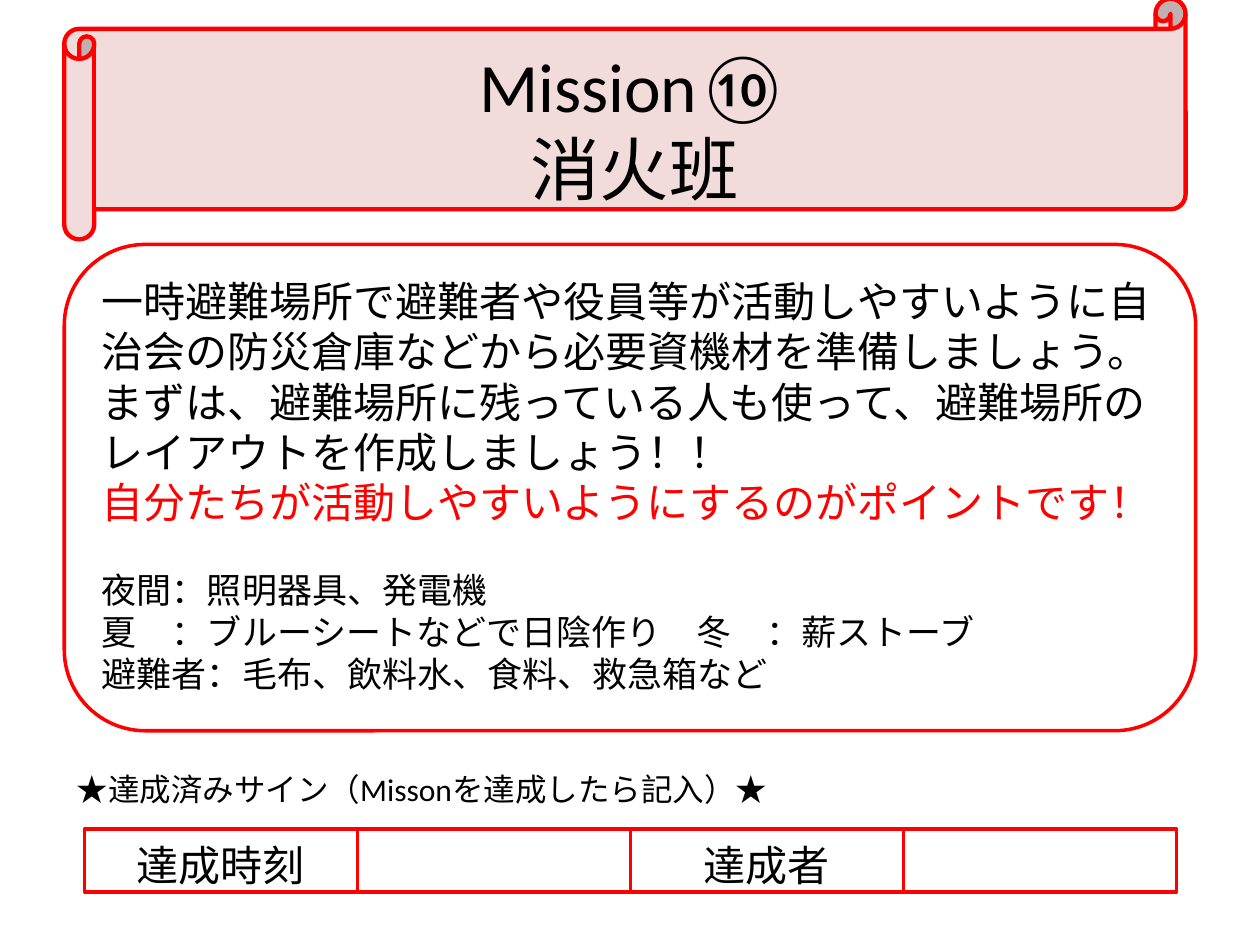
from lxml import etree
from pptx import Presentation
from pptx import util as u
from pptx.dml.color import RGBColor
from pptx.enum import shapes, text
from pptx.oxml.ns import qn

COLORS = {"ink": "000000", "red": "FF0000", "blush": "F2DCDB"}
LATIN, JAPANESE = "Calibri", "Noto Sans CJK JP"
COLUMNS, ROWS = 100, 75
LINE_HEIGHT = 1.195
CENTER = text.PP_ALIGN.CENTER

MISSION = [
    ("一時避難場所で避難者や役員等が活動しやすいように自治会の防災倉庫などから"
     "必要資機材を準備しましょう。", 24, "ink", 0),
    ("まずは、避難場所に残っている人も使って、避難場所のレイアウトを作成しましょう！！", 24, "ink", 0),
    ("自分たちが活動しやすいようにするのがポイントです！", 24, "red", 0),
    ("夜間：照明器具、発電機", 20, "ink", 24),
    ("夏　：ブルーシートなどで日陰作り　冬　：薪ストーブ", 20, "ink", 0),
    ("避難者：毛布、飲料水、食料、救急箱など", 20, "ink", 0),
]
SIGN_CELLS = ["達成時刻", "", "達成者", ""]


class MissionSlide:
    def __init__(self, presentation):
        self.width = presentation.slide_width
        self.height = presentation.slide_height
        self.slide = presentation.slides.add_slide(presentation.slide_layouts[6])

    def place(self, column, row, columns, rows):
        """Turn grid units into left, top, width and height."""
        across, down = self.width / COLUMNS, self.height / ROWS
        return (u.Emu(round(column * across)), u.Emu(round(row * down)),
                u.Emu(round(columns * across)), u.Emu(round(rows * down)))

    def outline(self, kind, area, line_width, fill=None, parent=None):
        parent = parent or self.slide
        shape = parent.shapes.add_shape(kind, *self.place(*area))
        shape.shadow.inherit = False
        if fill:
            shape.fill.solid()
            shape.fill.fore_color.rgb = RGBColor.from_string(COLORS[fill])
        else:
            shape.fill.background()
        shape.line.color.rgb = RGBColor.from_string(COLORS["red"])
        shape.line.width = u.Pt(line_width)
        return shape

    def fill_text(self, shape, lines, font=LATIN, alignment=None, inset=0.1,
                  anchor=text.MSO_ANCHOR.MIDDLE):
        """Fill a shape with (wording, size, colour, space before) lines."""
        frame = shape.text_frame
        frame_format = {"word_wrap": True, "vertical_anchor": anchor,
                        "auto_size": text.MSO_AUTO_SIZE.NONE,
                        "margin_top": u.Inches(inset), "margin_bottom": u.Inches(0.03)}
        for name, value in frame_format.items():
            setattr(frame, name, value)
        for index, (wording, size, color, gap) in enumerate(lines):
            paragraph = frame.add_paragraph() if index else frame.paragraphs[0]
            paragraph_format = {"alignment": alignment, "space_before": u.Pt(gap),
                                "line_spacing": u.Pt(round(size * LINE_HEIGHT, 1))}
            for name, value in paragraph_format.items():
                setattr(paragraph, name, value)
            for part_index, part in enumerate(wording.split("\n")):
                if part_index:
                    paragraph.add_line_break()
                run = paragraph.add_run()
                run.text = part
                for name, value in {"name": font, "size": u.Pt(size)}.items():
                    setattr(run.font, name, value)
                run.font.color.rgb = RGBColor.from_string(COLORS[color])
                east_asian = etree.SubElement(run._r.get_or_add_rPr(), qn("a:ea"))
                east_asian.set("typeface", JAPANESE)

    def text_box(self, area, lines, **style):
        shape = self.slide.shapes.add_textbox(*self.place(*area))
        self.fill_text(shape, lines, **style)

    def cell_row(self, column, row, columns, rows, labels):
        group = self.slide.shapes.add_group_shape()
        for index, label in enumerate(labels):
            area = (column + index * columns, row, columns, rows)
            shape = self.outline(shapes.MSO_SHAPE.RECTANGLE, area, 2, parent=group)
            if label:
                self.fill_text(shape, [(label, 24, "ink", 0)], alignment=CENTER)


def main():
    presentation = Presentation()
    presentation.slide_width = u.Inches(10)
    presentation.slide_height = u.Inches(7.5)
    page = MissionSlide(presentation)

    page.text_box((7.1, 21, 87.8, 34.7), MISSION, font=JAPANESE, inset=0.09,
                  anchor=text.MSO_ANCHOR.TOP)
    page.outline(shapes.MSO_SHAPE.HORIZONTAL_SCROLL, (5.1, -0.1, 89, 19.1), 2.5, "blush")
    page.text_box((9.8, 3.2, 81.1, 12.5), [("Mission⑩\n消火班", 39.6, "ink", 0)],
                  alignment=CENTER, inset=0.15)
    page.outline(shapes.MSO_SHAPE.ROUNDED_RECTANGLE, (5.1, 19.4, 89.8, 38.6), 2)
    page.text_box((5.1, 60.3, 66.9, 4),
                  [("★達成済みサイン（Missonを達成したら記入）★", 18, "ink", 0)])
    page.cell_row(6.7, 65.8, 21.67, 5, SIGN_CELLS)

    presentation.save("out.pptx")


if __name__ == "__main__":
    main()
